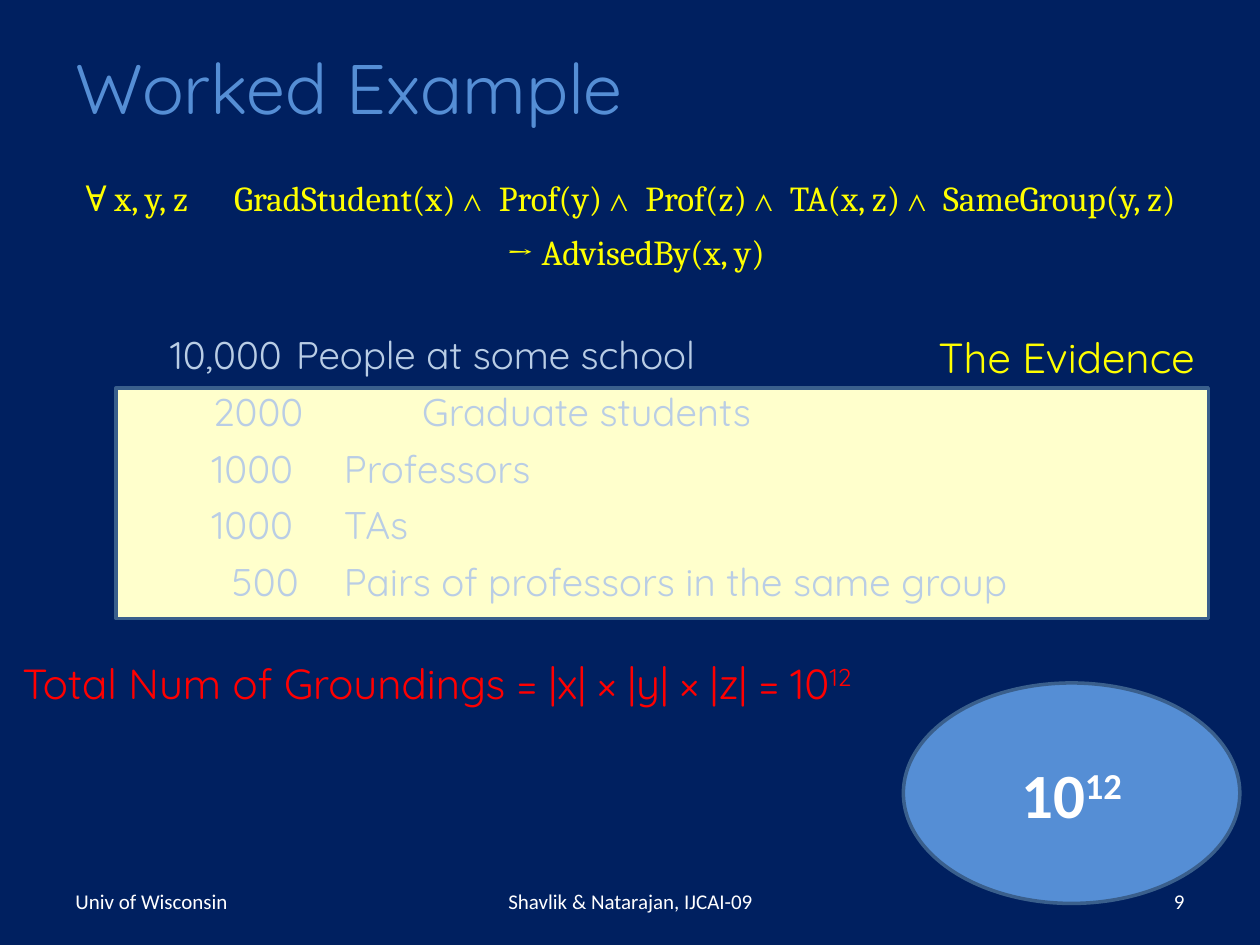
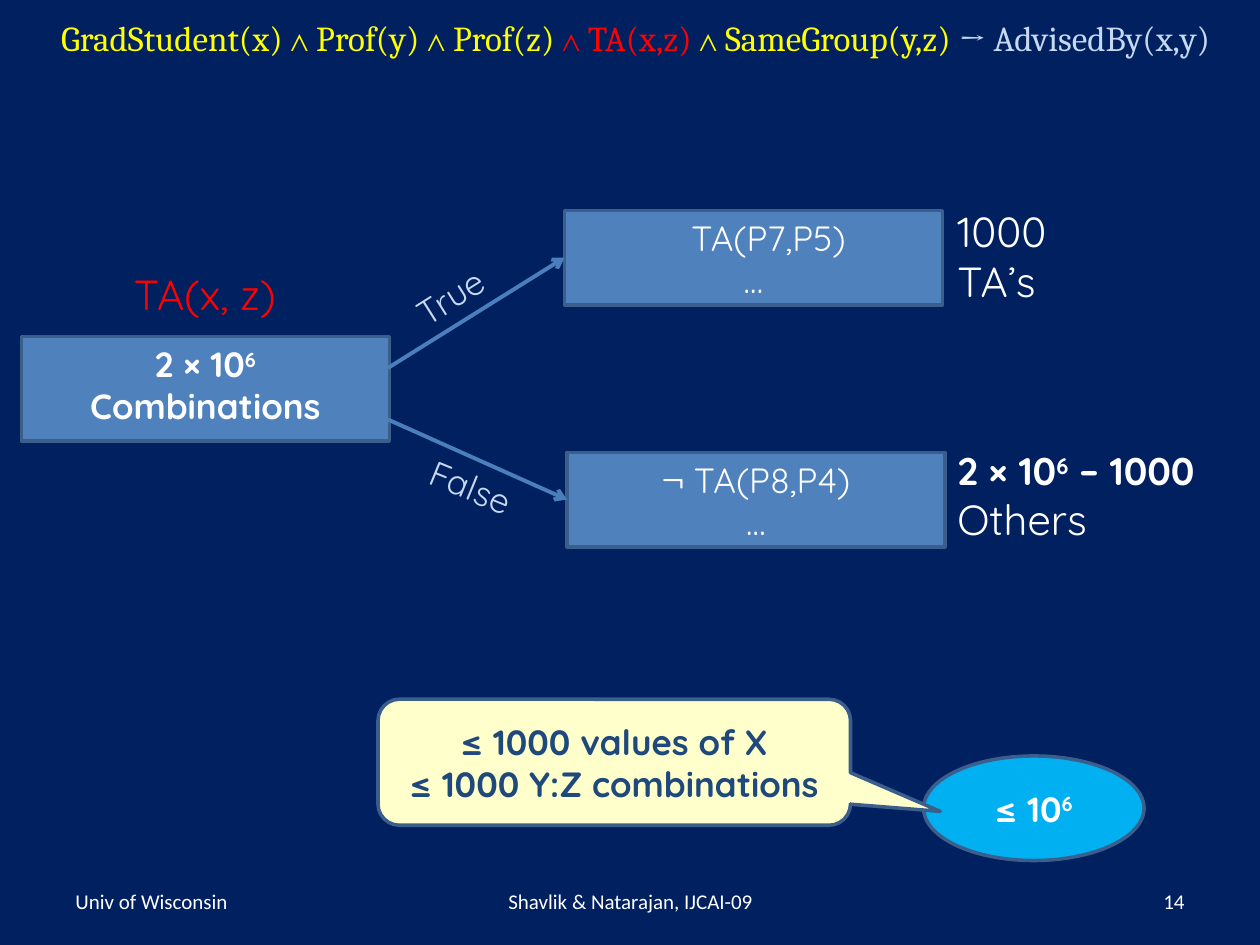
"""Builds two slides on counting the groundings of a logical rule."""
import lxml.etree
import pptx
import pptx.dml.color
import pptx.enum.shapes
import pptx.enum.text
import pptx.oxml.ns
import pptx.util

Inches = pptx.util.Inches
Pt = pptx.util.Pt
qn = pptx.oxml.ns.qn
ALIGN = pptx.enum.text.PP_ALIGN
ANCHOR = pptx.enum.text.MSO_ANCHOR
SHAPE = pptx.enum.shapes.MSO_SHAPE

COLORS = {
    "navy": "002060",
    "title": "558ED5",
    "list": "B9CDE5",
    "pale": "C6D9F1",
    "yellow": "FFFF00",
    "red": "FF0000",
    "white": "FFFFFF",
    "cream": "FFFFCC",
    "ink": "1F497D",
    "box": "4F81BD",
    "cyan": "00B0F0",
    "outline": "3A5F8C",
    "arrow": "4B7EBC",
}

SUPER = {"baseline": "30000"}
AND = ("⋀", {"size": 14})
WIDE_AND = ("⋀", {"size": 14, "spc": "550"})


def rgb(name):
    return pptx.dml.color.RGBColor.from_string(COLORS[name])


def font(size, color, name="Quicksand", bold=False):
    return {"size": size, "color": color, "name": name, "bold": bold}


FORMULA = font(20, "yellow", "Cambria")
FOOTER = font(12, "white", "Calibri")
NODE = font(20, "white")
STRONG = font(20, "white", bold=True)
BRANCH = font(20, "pale")


def add_span(para, text, style):
    span = para.add_run()
    span.text = text
    span.font.color.rgb = rgb(style["color"])
    values = {"name": style["name"], "bold": style["bold"], "size": Pt(style["size"])}
    for key, value in values.items():
        setattr(span.font, key, value)
    for key in ("baseline", "spc"):
        if key in style:
            span._r.get_or_add_rPr().set(key, style[key])


def write(shape, lines, style, align=ALIGN.LEFT, anchor=ANCHOR.TOP, **para_values):
    """Fill a shape with lines, each a string or a list of strings and (text, changes)."""
    frame = shape.text_frame
    frame.word_wrap = True
    frame.auto_size = pptx.enum.text.MSO_AUTO_SIZE.NONE
    frame.vertical_anchor = anchor
    values = {"alignment": align, "space_before": Pt(0), **para_values}
    for index, line in enumerate(lines):
        para = frame.add_paragraph() if index else frame.paragraphs[0]
        for key, value in values.items():
            setattr(para, key, value)
        for part in [line] if isinstance(line, str) else line:
            text, changes = (part, {}) if isinstance(part, str) else part
            add_span(para, text, {**style, **changes})
    return shape


def hang(para, start, tab):
    """Start a line at one indent and put the text after its tab at another."""
    properties = para._p.get_or_add_pPr()
    properties.set("marL", str(Inches(tab)))
    properties.set("indent", str(Inches(start - tab)))


def place(shape, box):
    for key, value in zip(("left", "top", "width", "height"), box):
        setattr(shape, key, Inches(value))
    return shape


def add_text(page, box, lines, style, rotation=0, **layout):
    shape = page.shapes.add_textbox(*map(Inches, box))
    shape.rotation = rotation
    return write(shape, lines, style, **layout)


def add_figure(page, kind, box, fill, lines=(), style=STRONG, anchor=ANCHOR.MIDDLE):
    shape = page.shapes.add_shape(kind, *map(Inches, box))
    shape.shadow.inherit = False
    shape.fill.solid()
    shape.fill.fore_color.rgb = rgb(fill)
    shape.line.color.rgb = rgb("outline")
    shape.line.width = Pt(2)
    return write(shape, lines, style, ALIGN.CENTER, anchor)


def add_arrow(page, start, target):
    """Draw an arrow from a point to the left side of a box."""
    arrow = page.shapes.add_connector(
        pptx.enum.shapes.MSO_CONNECTOR.STRAIGHT, *map(Inches, start), target.left, target.top)
    arrow.end_connect(target, 1)
    arrow.line.color.rgb = rgb("arrow")
    arrow.line.width = Pt(2.25)
    properties = arrow.element.spPr
    lxml.etree.SubElement(properties.find(qn("a:ln")), qn("a:tailEnd"), type="arrow")
    lxml.etree.SubElement(properties, qn("a:effectLst"))


def add_footer(page, number):
    for left, width, text, align in (
        (0.5, 2.33, "Univ of Wisconsin", ALIGN.LEFT),
        (3.42, 3.17, "Shavlik & Natarajan, IJCAI-09", ALIGN.CENTER),
        (7.17, 2.33, str(number), ALIGN.RIGHT),
    ):
        add_text(page, (left, 6.95, width, 0.4), [text], FOOTER,
                 align=align, anchor=ANCHOR.MIDDLE)


def add_evidence(page):
    """List the evidence counts in the body placeholder over a cream panel."""
    panel = add_figure(page, SHAPE.RECTANGLE, (0.92, 3.08, 8.67, 1.83), "cream")
    page.shapes.element.insert(2, panel.element)
    evidence = (
        ("10,000", "People at some school", 0, 1),
        ("2000", "Graduate students", 0.34, 2),
        ("1000", "Professors", 0.33, 1.38),
        ("1000", "TAs", 0.33, 1.38),
        ("500", "Pairs of professors in the same group", 0.49, 1.38),
    )
    body = place(page.placeholders[1], (1.25, 2.58, 8.25, 2.29))
    write(body, [f"{count}\t{label}" for count, label, _, _ in evidence],
          font(22, "list"), space_after=Pt(6))
    for para, (_, _, start, tab) in zip(body.text_frame.paragraphs, evidence):
        hang(para, start, tab)
        lxml.etree.SubElement(para._p.get_or_add_pPr(), qn("a:buNone"))


def build_worked_example(deck):
    page = deck.slides.add_slide(deck.slide_layouts[1])
    write(place(page.shapes.title, (0.5, 0.25, 9, 0.87)), ["Worked Example"],
          font(40, "title"), anchor=ANCHOR.MIDDLE)
    rule = add_text(page, (0.42, 1.25, 9.25, 0.98), [
        ["∀ x, y, z\tGradStudent(x) ", WIDE_AND, " Prof(y) ", WIDE_AND, " Prof(z) ",
         WIDE_AND, " TA(x, z) ", WIDE_AND, " SameGroup(y, z)"],
        "→ AdvisedBy(x, y)",
    ], FORMULA, align=ALIGN.CENTER, line_spacing=1.3)
    premise = rule.text_frame.paragraphs[0]
    premise.alignment = ALIGN.LEFT
    hang(premise, 0.16, 1.34)
    add_evidence(page)
    add_text(page, (0.08, 5.17, 7.48, 0.5),
             [["Total Num of Groundings = |x| × |y| × |z| = 10", ("12", SUPER)]],
             font(24, "red"))
    add_figure(page, SHAPE.OVAL, (7.17, 5.42, 2.67, 1.75), "title",
               [["10", ("12", SUPER)]], font(36, "white", "Calibri", True))
    add_text(page, (6.83, 2.58, 2.75, 0.5), ["The Evidence"],
             font(24, "yellow"), align=ALIGN.RIGHT)
    add_footer(page, 9)


def build_ta_split(deck):
    page = deck.slides.add_slide(deck.slide_layouts[6])
    red = {"color": "red"}
    add_text(page, (0, 0.08, 10.09, 0.44), [[
        "GradStudent(x) ", AND, " Prof(y) ", AND, " Prof(z) ",
        ("⋀", {"size": 14, **red}), (" TA(x,z) ", red), AND, " SameGroup(y,z) ",
        ("→ AdvisedBy(x,y)", {"color": "pale"}),
    ]], FORMULA, align=ALIGN.CENTER)

    add_text(page, (0.92, 2.08, 1.41, 0.5), ["TA(x, z)"], font(24, "red"),
             align=ALIGN.CENTER)
    add_figure(page, SHAPE.RECTANGLE, (0.17, 2.67, 2.92, 0.83), "box",
               [["2 × 10", ("6", SUPER)], "Combinations"], anchor=ANCHOR.TOP)

    others = [["2 × 10", ("6", SUPER), " – 1000"],
              [("Others", {"size": 24, "bold": False})]]
    for box, fact, start, branch, branch_box, angle, note_top, note, note_font in (
        ((4.48, 1.67, 3, 0.75), "TA(P7,P5)", (3.08, 2.92), "True",
         (3.18, 2.1, 0.9, 0.44), 327.8, 1.58, ["1000", "TA’s"], font(24, "white")),
        ((4.5, 3.59, 3, 0.75), "¬ TA(P8,P4)", (3.08, 3.33), "False",
         (3.3, 3.66, 0.93, 0.44), 22.4, 3.5, others, font(22, "white", bold=True)),
    ):
        node = add_figure(page, SHAPE.RECTANGLE, box, "box", [fact, "…"], NODE, ANCHOR.TOP)
        if branch == "True":
            hang(node.text_frame.paragraphs[0], 0.24, 0.24)
        add_arrow(page, start, node)
        add_text(page, branch_box, [branch], BRANCH, angle)
        add_text(page, (7.5, note_top, 2.5, 0.9), note, note_font)

    add_figure(page, SHAPE.OVAL, (7.33, 6, 1.75, 0.83), "cyan", [["≤ 10", ("6", SUPER)]])
    callout = add_figure(page, SHAPE.ROUNDED_RECTANGULAR_CALLOUT, (3, 5.55, 3.75, 1), "cream",
                         ["≤ 1000 values of X", "≤ 1000 Y:Z combinations"],
                         font(20, "ink", bold=True))
    for index, value in enumerate((0.69, 0.39, 0.17)):
        callout.adjustments[index] = value
    add_footer(page, 14)


def main():
    deck = pptx.Presentation()
    deck.slide_width = Inches(10)
    deck.slide_height = Inches(7.5)
    background = deck.slide_master.background.fill
    background.solid()
    background.fore_color.rgb = rgb("navy")
    build_worked_example(deck)
    build_ta_split(deck)
    deck.save("out.pptx")


if __name__ == "__main__":
    main()
